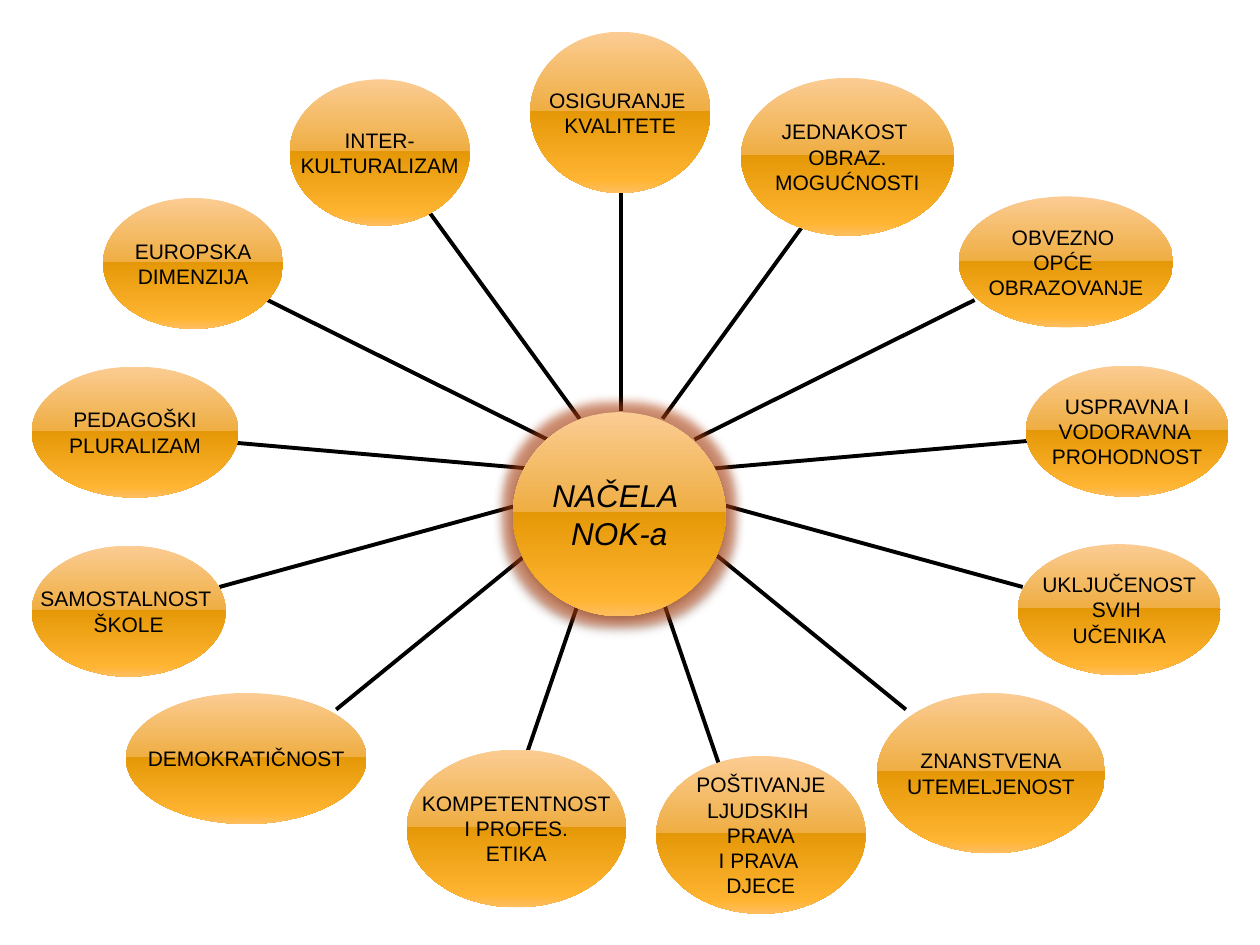
"""Build a radial diagram of thirteen principles around a central hub."""
from dataclasses import dataclass
from math import cos, pi, sin

from pptx import Presentation
from pptx import oxml, util as u
from pptx.dml.color import RGBColor
from pptx.enum import shapes, text
from pptx.oxml import ns

BLACK = RGBColor(0x00, 0x00, 0x00)
GLOW = RGBColor(0xC8, 0x48, 0x10)
AMBER_STOPS = (
    (0, RGBColor(0xFB, 0xCC, 0x93)),
    (49, RGBColor(0xEF, 0xAE, 0x43)),
    (49, RGBColor(0xE5, 0x98, 0x07)),
    (92, RGBColor(0xFF, 0xB4, 0x32)),
    (100, RGBColor(0xFF, 0xBE, 0x5F)),
)
CENTER = (12.52, 9.61)
INNER_RADII = (1.8, 1.32)
OUTER_RADII = (8.66, 6.27)


@dataclass(frozen=True)
class Bubble:
    label: str
    left: float
    top: float
    width: float
    height: float
    size: int = 12
    italic: bool = False


PRINCIPLES = (
    Bubble("OSIGURANJE \nKVALITETE", 10.69, 0.64, 3.63, 3.25),
    Bubble("JEDNAKOST \nOBRAZ.\nMOGUĆNOSTI", 14.94, 1.57, 4.29, 3.18),
    Bubble("OBVEZNO \nOPĆE \nOBRAZOVANJE", 19.33, 3.96, 4.32, 2.64),
    Bubble("USPRAVNA I\nVODORAVNA \nPROHODNOST", 20.68, 7.37, 4.09, 2.64),
    Bubble("UKLJUČENOST\nSVIH \nUČENIKA", 20.52, 10.97, 4.09, 2.64),
    Bubble("ZNANSTVENA\nUTEMELJENOST", 17.68, 13.97, 4.6, 3.23),
    Bubble("POŠTIVANJE\nLJUDSKIH \nPRAVA\nI PRAVA \nDJECE", 13.23, 15.24, 4.22, 3.18),
    Bubble("KOMPETENTNOST\nI PROFES.\nETIKA", 8.2, 15.11, 4.42, 3.18),
    Bubble("DEMOKRATIČNOST", 2.54, 13.97, 4.85, 2.64),
    Bubble("SAMOSTALNOST \nŠKOLE", 0.64, 11, 3.91, 2.64),
    Bubble("PEDAGOŠKI\nPLURALIZAM", 0.64, 7.39, 4.17, 2.64),
    Bubble("EUROPSKA\nDIMENZIJA", 2.08, 3.99, 3.63, 2.64),
    Bubble("INTER-\nKULTURALIZAM", 5.84, 1.6, 3.63, 2.95),
)
HUB = Bubble("NAČELA \nNOK-a", 10.34, 8.31, 4.29, 4.11, size=18, italic=True)


def apply_format(target, values: dict) -> None:
    for name, value in values.items():
        setattr(target, name, value)


def element(body: str):
    return oxml.parse_xml(body.replace(" ", f" {ns.nsdecls('a')} ", 1))


def gradient():
    stops = "".join(
        f'<a:gs pos="{place * 1000}"><a:srgbClr val="{color}"/></a:gs>'
        for place, color in AMBER_STOPS
    )
    return element(
        f'<a:gradFill rotWithShape="1"><a:gsLst>{stops}</a:gsLst>'
        '<a:lin ang="5400000" scaled="0"/></a:gradFill>'
    )


def point_on(radii: tuple[float, float], angle: float) -> tuple[u.Length, u.Length]:
    return (
        u.Cm(CENTER[0] + radii[0] * sin(angle)),
        u.Cm(CENTER[1] - radii[1] * cos(angle)),
    )


def draw_spoke(page, angle: float) -> None:
    line = page.shapes.add_connector(
        shapes.MSO_CONNECTOR.STRAIGHT,
        *point_on(INNER_RADII, angle),
        *point_on(OUTER_RADII, angle),
    )
    line.line.color.rgb = BLACK
    line.line.width = u.Pt(2.25)
    oxml.xmlchemy.OxmlElement("a:effectLst")
    line._element.spPr.append(oxml.xmlchemy.OxmlElement("a:effectLst"))


def draw_bubble(page, bubble: Bubble):
    sides = (bubble.left, bubble.top, bubble.width, bubble.height)
    oval = page.shapes.add_shape(shapes.MSO_SHAPE.OVAL, *map(u.Cm, sides))
    oval.line.fill.background()
    oval.shadow.inherit = False
    oval._element.spPr.insert(2, gradient())
    box = oval.text_frame
    box.text = bubble.label
    apply_format(box, {
        "word_wrap": False,
        "vertical_anchor": text.MSO_ANCHOR.MIDDLE,
        "margin_left": 0,
        "margin_right": 0,
        "margin_top": 0,
        "margin_bottom": 0,
    })
    for para in box.paragraphs:
        para.alignment = text.PP_ALIGN.CENTER
        for span in para.runs:
            apply_format(span.font, {
                "name": "Arial",
                "size": u.Pt(bubble.size),
                "italic": bubble.italic,
            })
            span.font.color.rgb = BLACK
    return oval


def add_hub_effects(oval) -> None:
    effects = oval._element.spPr.find(ns.qn("a:effectLst"))
    effects.append(element(
        f'<a:glow rad="{u.Pt(11)}"><a:srgbClr val="{GLOW}">'
        '<a:alpha val="50000"/></a:srgbClr></a:glow>'
    ))
    effects.append(element(
        f'<a:outerShdw blurRad="{u.Pt(4)}" dist="{u.Pt(2)}" dir="5400000" '
        f'rotWithShape="0"><a:srgbClr val="{BLACK}">'
        '<a:alpha val="45000"/></a:srgbClr></a:outerShdw>'
    ))


def main() -> None:
    deck = Presentation()
    apply_format(deck, {"slide_width": u.Cm(25.4), "slide_height": u.Cm(19.05)})
    page = deck.slides.add_slide(deck.slide_layouts[6])
    for index, principle in enumerate(PRINCIPLES):
        draw_spoke(page, 2 * pi * index / len(PRINCIPLES))
        draw_bubble(page, principle)
    add_hub_effects(draw_bubble(page, HUB))
    deck.save("out.pptx")


if __name__ == "__main__":
    main()
